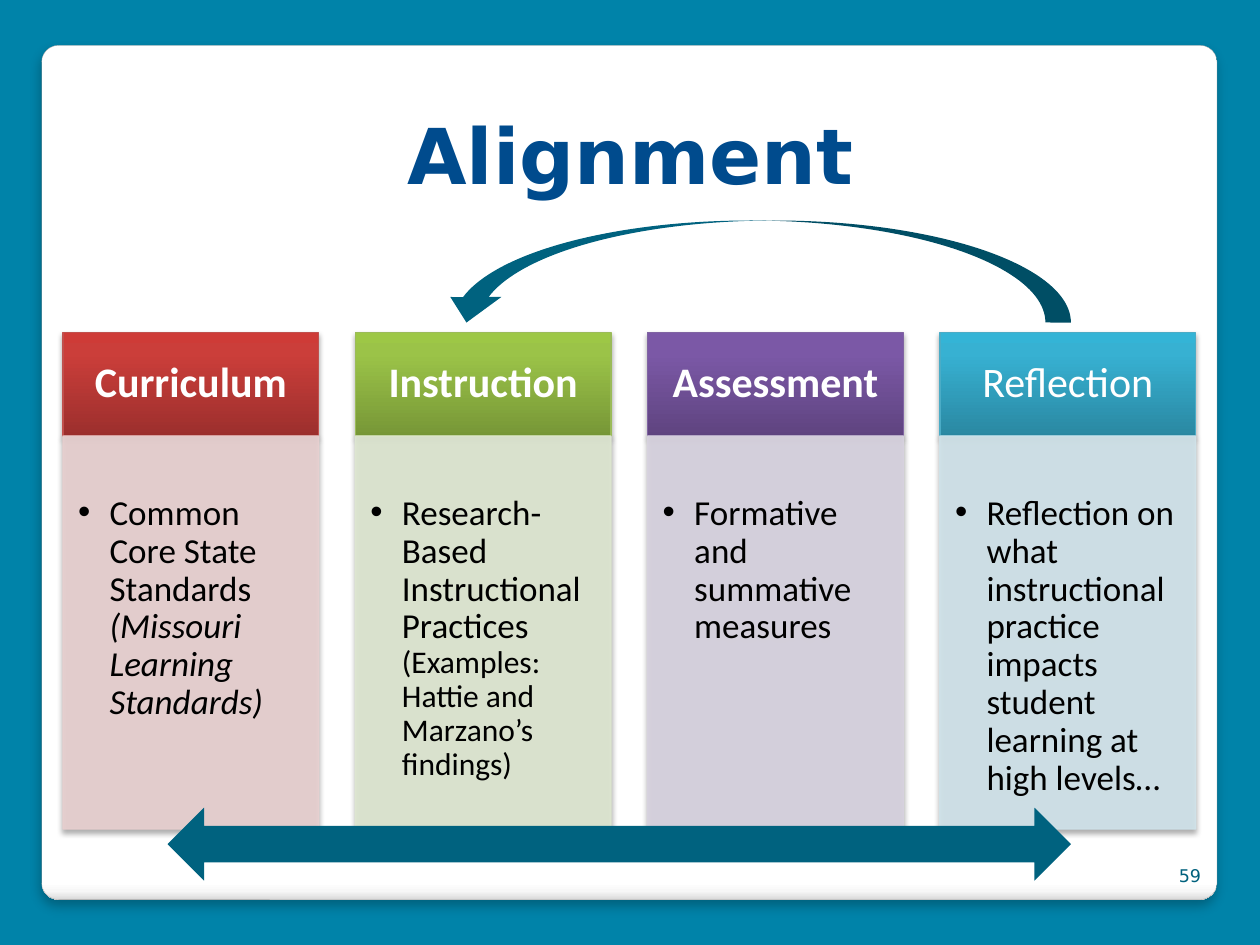
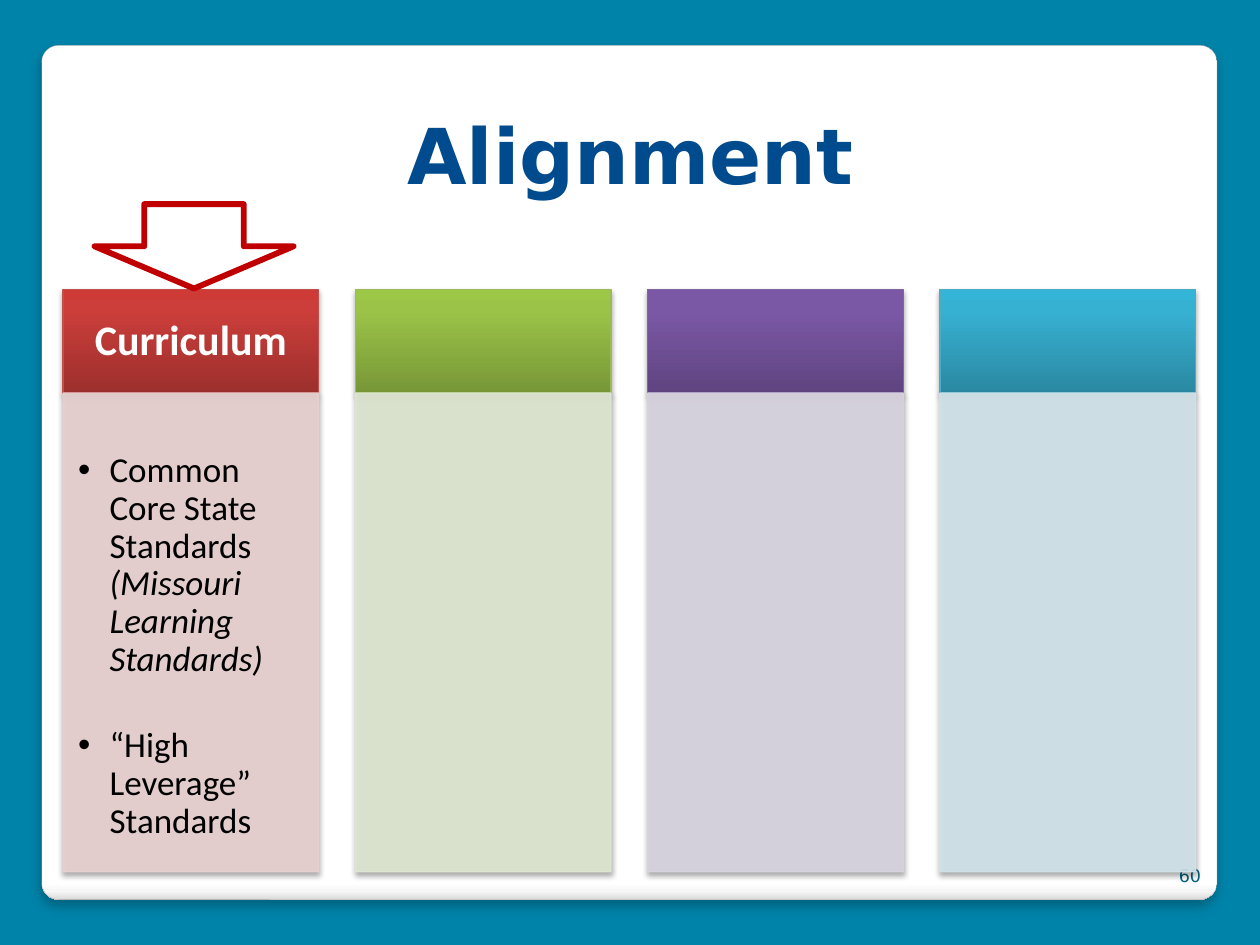
from lxml.etree import SubElement
from pptx import Presentation
from pptx.dml.color import RGBColor
from pptx.enum.shapes import MSO_SHAPE
from pptx.enum.text import MSO_ANCHOR, PP_ALIGN
from pptx.oxml.ns import qn
from pptx.util import Inches, Pt

TEAL = RGBColor(0x00, 0x83, 0xA9)
DEEP_TEAL = RGBColor(0x00, 0x62, 0x7F)
NUMBER_TEAL = RGBColor(0x00, 0x61, 0x7D)
TITLE_BLUE = RGBColor(0x00, 0x4B, 0x8D)
RED = RGBColor(0xC0, 0x00, 0x00)
PANEL_EDGE = RGBColor(0xA4, 0xA4, 0xA4)
WHITE = RGBColor(0xFF, 0xFF, 0xFF)
BLACK = RGBColor(0x00, 0x00, 0x00)
PANEL_STOPS = [
    (0, WHITE),
    (98, WHITE),
    (99, RGBColor(0xF7, 0xF7, 0xF7)),
    (100, RGBColor(0xDA, 0xDA, 0xDA)),
]
COLUMN_COLOURS = [
    (RGBColor(0x9C, 0x2F, 0x2D), RGBColor(0xCB, 0x3E, 0x3A), RGBColor(0xCE, 0x3B, 0x37),
     RGBColor(0xC0, 0x50, 0x4D), RGBColor(0xE8, 0xD0, 0xD0)),
    (RGBColor(0x77, 0x97, 0x37), RGBColor(0x9B, 0xC3, 0x48), RGBColor(0x9D, 0xC7, 0x46),
     RGBColor(0x9B, 0xBB, 0x59), RGBColor(0xDE, 0xE7, 0xD1)),
    (RGBColor(0x5F, 0x44, 0x80), RGBColor(0x7B, 0x58, 0xA6), RGBColor(0x7C, 0x57, 0xA8),
     RGBColor(0x80, 0x64, 0xA2), RGBColor(0xD8, 0xD3, 0xE0)),
    (RGBColor(0x2A, 0x88, 0xA2), RGBColor(0x37, 0xB1, 0xD2), RGBColor(0x34, 0xB4, 0xD6),
     RGBColor(0x4B, 0xAC, 0xC6), RGBColor(0xD0, 0xE3, 0xEA)),
]
TITLE_FONT = "DejaVu Sans"
BODY_FONT = "Calibri"

LEFT, STEP, COLUMN_WIDTH, HEADER_HEIGHT = 0.5, 2.32, 2.03, 0.82

CURRICULUM = ("Common Core State Standards ", "(Missouri Learning Standards)", 20, True)
SLIDES = [
    (59, 2.64, 3.12, [
        ("Curriculum", True, [CURRICULUM]),
        ("Instruction", True, [("Research-Based Instructional Practices\v",
                                "(Examples: Hattie and Marzano’s findings)", 18, False)]),
        ("Assessment", True, [("Formative and summative measures", "", 20, False)]),
        ("Reflection", False, [("Reflection on what instructional practice impacts "
                                "student learning at high levels…", "", 20, False)]),
    ]),
    (60, 2.3, 3.8, [
        ("Curriculum", True, [CURRICULUM, ("“High Leverage” Standards", "", 20, False)]),
        ("", False, []),
        ("", False, []),
        ("", False, []),
    ]),
]


def add_block(page, kind, place, fill, line=None, width=0.75, shadow=None):
    block = page.shapes.add_shape(kind, *[Inches(length) for length in place])
    block.fill.solid()
    block.fill.fore_color.rgb = fill
    if line is None:
        block.line.fill.background()
    else:
        block.line.color.rgb = line
        block.line.width = Pt(width)
    block.shadow.inherit = False
    if shadow:
        opacity, blur, distance = shadow
        effects = block.element.spPr.find(qn("a:effectLst"))
        outer = SubElement(effects, qn("a:outerShdw"), blurRad=str(Pt(blur)),
                           dist=str(Pt(distance)), dir="5400000", algn="t", rotWithShape="0")
        colour = SubElement(outer, qn("a:srgbClr"), val="000000")
        SubElement(colour, qn("a:alpha"), val=str(opacity * 1000))
    return block


def set_gradient(block, stops, degrees):
    block.fill.gradient()
    gradient = block.element.spPr.find(qn("a:gradFill"))
    for child in list(gradient):
        gradient.remove(child)
    stop_list = SubElement(gradient, qn("a:gsLst"))
    for position, colour in stops:
        stop = SubElement(stop_list, qn("a:gs"), pos=str(position * 1000))
        SubElement(stop, qn("a:srgbClr"), val=str(colour))
    SubElement(gradient, qn("a:lin"), ang=str(degrees * 60000), scaled="0")


deck = Presentation()
deck.slide_width, deck.slide_height = Inches(10), Inches(7.5)
background = deck.slide_master.background.fill
background.solid()
background.fore_color.rgb = TEAL
layout = deck.slide_layouts.get_by_name("Title Only")
pages = [deck.slides.add_slide(layout) for _ in SLIDES]

panel = add_block(pages[0], MSO_SHAPE.ROUNDED_RECTANGLE, (0.33, 0.36, 9.33, 6.78),
                  WHITE, PANEL_EDGE, 0.16, (25, 6, 4))
panel.adjustments[0] = 0.02
set_gradient(panel, PANEL_STOPS, 90)
panel.element.nvSpPr.cNvPr.set("id", "20")
layout.shapes.element.insert(2, panel.element)

for page, (number, top, body_height, columns) in zip(pages, SLIDES):
    title = page.shapes.title
    title.left, title.top = Inches(0.67), Inches(0.75)
    title.width, title.height = Inches(8.67), Inches(1.15)
    title.text_frame.text = "Alignment"
    title.text_frame.vertical_anchor = MSO_ANCHOR.TOP
    title.text_frame.margin_top = Inches(0.1)
    para = title.text_frame.paragraphs[0]
    para.alignment = PP_ALIGN.CENTER
    font = para.runs[0].font
    font.name, font.size, font.bold = TITLE_FONT, Pt(44), True
    font.color.rgb = TITLE_BLUE

    box = page.shapes.add_textbox(Inches(9.13), Inches(6.68), Inches(0.5), Inches(0.4))
    box.text_frame.word_wrap = True
    box.text_frame.vertical_anchor = MSO_ANCHOR.BOTTOM
    box.text_frame.text = str(number)
    para = box.text_frame.paragraphs[0]
    para.alignment = PP_ALIGN.RIGHT
    font = para.runs[0].font
    font.name, font.size = TITLE_FONT, Pt(10)
    font.color.rgb = NUMBER_TEAL

    for index, (heading, bold, points) in enumerate(columns):
        dark, middle, bright, edge, tint = COLUMN_COLOURS[index]
        left = LEFT + index * STEP
        header = add_block(page, MSO_SHAPE.RECTANGLE, (left, top, COLUMN_WIDTH, HEADER_HEIGHT),
                           middle, edge, shadow=(35, 3.1, 1.8))
        set_gradient(header, [(0, dark), (80, middle), (100, bright)], 270)
        if heading:
            frame = header.text_frame
            frame.margin_left = frame.margin_right = Inches(0.19)
            frame.margin_top = frame.margin_bottom = Inches(0.11)
            frame.vertical_anchor = MSO_ANCHOR.MIDDLE
            frame.text = heading
            para = frame.paragraphs[0]
            para.alignment = PP_ALIGN.CENTER
            para.line_spacing = 0.9
            font = para.runs[0].font
            font.name, font.size, font.bold = BODY_FONT, Pt(24), bold
            font.color.rgb = WHITE

        body = add_block(page, MSO_SHAPE.RECTANGLE,
                         (left, top + HEADER_HEIGHT, COLUMN_WIDTH, body_height),
                         tint, tint, shadow=(35, 3.1, 1.8))
        for colour in body.element.spPr.findall(".//" + qn("a:solidFill") + "/" + qn("a:srgbClr")):
            SubElement(colour, qn("a:alpha"), val="90000")
        frame = body.text_frame
        frame.vertical_anchor = MSO_ANCHOR.TOP
        frame.margin_left, frame.margin_right = Inches(0.12), Inches(0.16)
        frame.margin_top, frame.margin_bottom = Inches(0.47), Inches(0.17)
        for order, (lead, note, note_size, italic) in enumerate(points):
            para = frame.add_paragraph() if order else frame.paragraphs[0]
            para.text = lead
            properties = para._p.get_or_add_pPr()
            properties.set("marL", str(Inches(0.25)))
            properties.set("indent", str(Inches(-0.25)))
            SubElement(properties, qn("a:buFont"), typeface="Arial")
            SubElement(properties, qn("a:buChar"), char="•")
            para.alignment = PP_ALIGN.LEFT
            para.line_spacing = 0.9
            if order:
                para.space_before = Pt(27.5)
            if note:
                span = para.add_run()
                span.text = note
                span.font.italic = italic
            for span in para.runs:
                span.font.name = BODY_FONT
                span.font.size = Pt(note_size if span.text == note else 20)
                span.font.color.rgb = BLACK

alignment_page, curriculum_page = pages
return_arrow = add_block(alignment_page, MSO_SHAPE.CURVED_DOWN_ARROW, (3.5, 1.75, 5, 0.81), DEEP_TEAL)
return_arrow.element.spPr.find(qn("a:xfrm")).set("flipH", "1")
add_block(alignment_page, MSO_SHAPE.LEFT_RIGHT_ARROW, (1.33, 6.41, 7.17, 0.58), DEEP_TEAL)
add_block(curriculum_page, MSO_SHAPE.DOWN_ARROW, (0.75, 1.62, 1.58, 0.67), WHITE, RED, 3.35)

deck.save("out.pptx")
